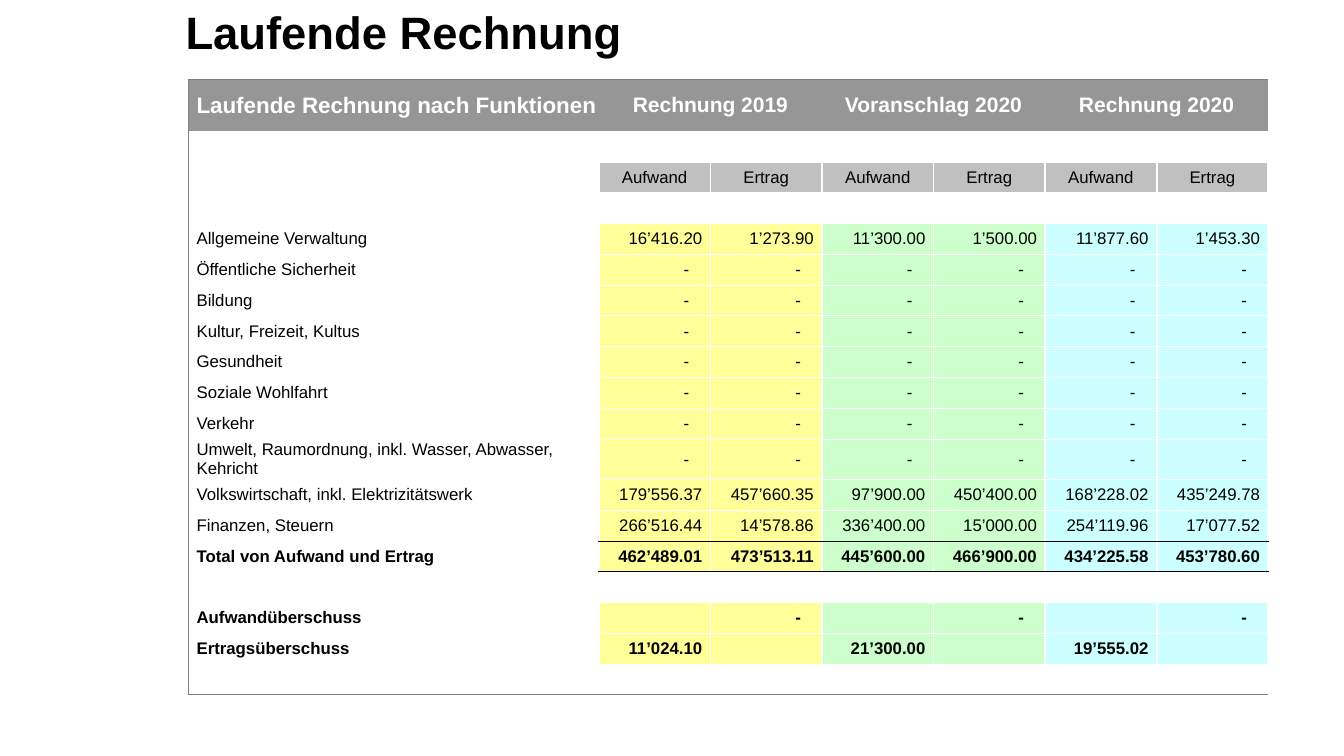
from lxml import etree
from pptx import Presentation
from pptx.dml.color import RGBColor
from pptx.enum import text as t
from pptx.oxml import ns
from pptx.util import Inches, Pt

BLACK = RGBColor(0x00, 0x00, 0x00)
WHITE = RGBColor(0xFF, 0xFF, 0xFF)
GRAY = RGBColor(0x80, 0x80, 0x80)
DARK = RGBColor(0x96, 0x96, 0x96)
SILVER = RGBColor(0xC0, 0xC0, 0xC0)
YELLOW = RGBColor(0xFF, 0xFF, 0x99)
GREEN = RGBColor(0xCC, 0xFF, 0xCC)
CYAN = RGBColor(0xCC, 0xFF, 0xFF)
TINTS = [YELLOW, GREEN, CYAN]

LEFT, MID, RIGHT = t.PP_ALIGN.LEFT, t.PP_ALIGN.CENTER, t.PP_ALIGN.RIGHT
YEARS = ["Rechnung 2019", "Voranschlag 2020", "Rechnung 2020"]
NONE = ["-"] * 6
ITEMS = [
    ("Allgemeine Verwaltung",
     ["16’416.20", "1’273.90", "11’300.00", "1’500.00", "11’877.60", "1’453.30"]),
    ("Öffentliche Sicherheit", NONE),
    ("Bildung", NONE),
    ("Kultur, Freizeit, Kultus", NONE),
    ("Gesundheit", NONE),
    ("Soziale Wohlfahrt", NONE),
    ("Verkehr", NONE),
    ("Umwelt, Raumordnung, inkl. Wasser, Abwasser, Kehricht", NONE),
    ("Volkswirtschaft, inkl. Elektrizitätswerk",
     ["179’556.37", "457’660.35", "97’900.00", "450’400.00", "168’228.02", "435’249.78"]),
    ("Finanzen, Steuern",
     ["266’516.44", "14’578.86", "336’400.00", "15’000.00", "254’119.96", "17’077.52"]),
    ("Total von Aufwand und Ertrag",
     ["462’489.01", "473’513.11", "445’600.00", "466’900.00", "434’225.58", "453’780.60"]),
    None,
    ("Aufwandüberschuss", ["", "-"] * 3),
    ("Ertragsüberschuss", ["11’024.10", "", "21’300.00", "", "19’555.02", ""]),
]
FIRST = 4
TOTAL = FIRST + 10
TALL = FIRST + 7
ROWS = FIRST + len(ITEMS) + 1
COLS = 8


def write(frame, words, size=12, color=BLACK, bold=False, align=LEFT):
    para = frame.paragraphs[0]
    para.alignment = align
    run = para.add_run()
    run.text = words
    font = run.font
    font.name, font.size, font.bold = "Arial", Pt(size), bold
    font.color.rgb = color


def level(row, col):
    """Line on the edge above a row, as colour and points, or None."""
    if row in (0, ROWS):
        return GRAY, 1
    if col < 2 or row == 1:
        return None
    return {TOTAL: (BLACK, 0.5), TOTAL + 1: (BLACK, 1)}.get(row, (WHITE, 0.5))


def side(row, col):
    """Line on the edge left of a column, as colour and points, or None."""
    if col == 0:
        return GRAY, 1
    return (WHITE, 1.5) if col > 1 and 1 < row < ROWS - 1 else None


class Deck:
    def __init__(self):
        self.prs = Presentation()
        self.prs.slide_width = Inches(13.33)
        self.prs.slide_height = Inches(7.5)
        self.slide = self.prs.slides.add_slide(self.prs.slide_layouts[5])

    def title(self, words):
        box = self.slide.shapes.title
        box.left, box.top = Inches(1.74), Inches(0.05)
        box.width, box.height = Inches(11.14), Inches(0.59)
        frame = box.text_frame
        frame.auto_size = t.MSO_AUTO_SIZE.NONE
        frame.vertical_anchor = t.MSO_ANCHOR.MIDDLE
        write(frame, words, size=32.4, bold=True)
        frame.paragraphs[0].line_spacing = 0.9

    def grid(self):
        """Add the empty table with its sizes, lines and clear cells."""
        heights = [0.51] + [0.298] * (ROWS - 1)
        heights[TALL] = 0.4
        widths = [0.07, 4] + [6.64 / 6] * 6
        self.table = self.slide.shapes.add_table(
            ROWS, COLS, Inches(1.87), Inches(0.79),
            Inches(sum(widths)), Inches(sum(heights))).table
        self.table.first_row = self.table.horz_banding = False
        for row, high in zip(self.table.rows, heights):
            row.height = Inches(high)
        for col, wide in zip(self.table.columns, widths):
            col.width = Inches(wide)
        for r in range(ROWS):
            for c in range(COLS):
                cell = self.table.cell(r, c)
                cell.margin_left = cell.margin_right = Inches(0.01)
                cell.margin_top = cell.margin_bottom = 0
                cell.vertical_anchor = t.MSO_ANCHOR.MIDDLE
                self.edge(cell, "L", side(r, c))
                self.edge(cell, "R", side(r, c + 1))
                self.edge(cell, "T", level(r, c))
                self.edge(cell, "B", level(r + 1, c))
                cell.fill.background()

    def edge(self, cell, name, line):
        props = cell._tc.get_or_add_tcPr()
        node = etree.SubElement(props, ns.qn("a:ln" + name))
        if line is None:
            etree.SubElement(node, ns.qn("a:noFill"))
            return
        color, points = line
        node.set("w", str(Pt(points)))
        fill = etree.SubElement(node, ns.qn("a:solidFill"))
        etree.SubElement(fill, ns.qn("a:srgbClr")).set("val", str(color))

    def cell(self, row, col, words="", fill=None, pad=0.01, **form):
        cell = self.table.cell(row, col)
        cell.margin_right = Inches(pad)
        if fill is not None:
            cell.fill.solid()
            cell.fill.fore_color.rgb = fill
        if words:
            write(cell.text_frame, words, **form)

    def heads(self):
        self.cell(0, 0, fill=DARK)
        self.cell(0, 1, "Laufende Rechnung nach Funktionen", fill=DARK,
                  size=16, color=WHITE, bold=True)
        for i, year in enumerate(YEARS):
            col = 2 + 2 * i
            self.table.cell(0, col).merge(self.table.cell(0, col + 1))
            self.cell(0, col, year, fill=DARK, size=15, color=WHITE,
                      bold=True, align=MID)
            for j, kind in enumerate(["Aufwand", "Ertrag"]):
                self.cell(2, col + j, kind, fill=SILVER, align=MID)

    def items(self):
        for row, item in enumerate(ITEMS, FIRST):
            if item is None:
                continue
            label, values = item
            bold = row >= TOTAL
            self.cell(row, 1, label, bold=bold)
            for i, value in enumerate(values):
                self.cell(row, 2 + i, value, fill=TINTS[i // 2], bold=bold,
                          align=RIGHT, pad=0.21 if value == "-" else 0.08)


def main():
    deck = Deck()
    deck.title("Laufende Rechnung")
    deck.grid()
    deck.heads()
    deck.items()
    deck.prs.save("out.pptx")


if __name__ == "__main__":
    main()
